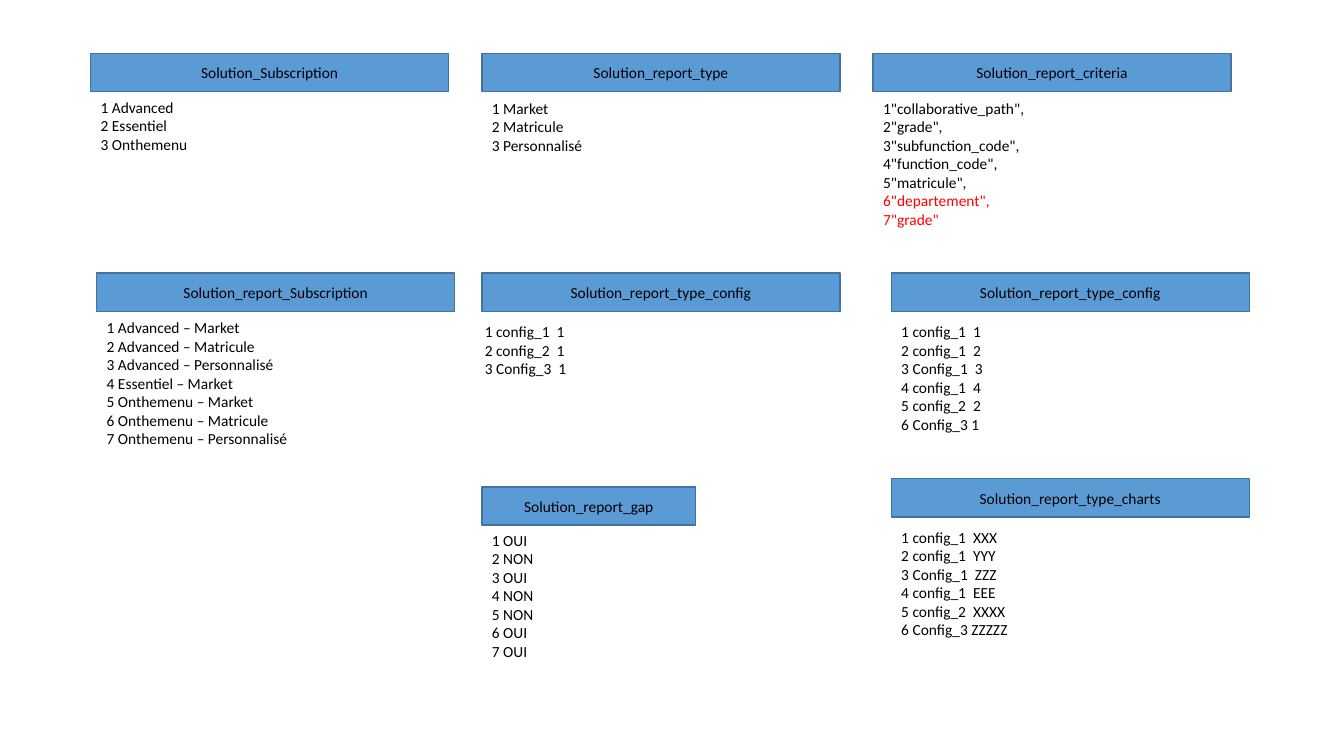
from dataclasses import dataclass

from pptx import Presentation
from pptx.dml.color import RGBColor
from pptx.enum.shapes import MSO_SHAPE
from pptx.enum.text import MSO_ANCHOR, MSO_AUTO_SIZE, PP_ALIGN
from pptx.util import Pt

RECTANGLE = MSO_SHAPE.RECTANGLE
MIDDLE = MSO_ANCHOR.MIDDLE
CENTER = PP_ALIGN.CENTER
FIT_SHAPE = MSO_AUTO_SIZE.SHAPE_TO_FIT_TEXT

PX = 9144  # 100 px to the inch
HEADER_HEIGHT = 38


@dataclass(frozen=True)
class Theme:
    font: str = "Calibri"
    size: Pt = Pt(11)
    border_width: Pt = Pt(1)
    fill: RGBColor = RGBColor(0x5B, 0x9B, 0xD5)
    border: RGBColor = RGBColor(0x43, 0x73, 0x9E)
    text: RGBColor = RGBColor(0, 0, 0)
    highlight: RGBColor = RGBColor(0xFF, 0, 0)


@dataclass(frozen=True)
class Entity:
    """A header with its list of rows; list_gap runs from header top to list top."""
    name: str
    left: int
    top: int
    rows: tuple[str, ...]
    list_gap: int
    list_height: int = 140
    list_shift: int = 0
    width: int = 355
    highlighted: int = 0  # number of last rows to show in the highlight colour


THEME = Theme()

ENTITIES = (
    Entity("Solution_Subscription", 90, 53,
           ("1 Advanced", "2 Essentiel", "3 Onthemenu"), 39, 96),
    Entity("Solution_report_type", 478, 53,
           ("1 Market", "2 Matricule", "3 Personnalisé"), 40, 66),
    Entity("Solution_report_criteria", 866, 53,
           ('1"collaborative_path",', '2"grade",', '3"subfunction_code",',
            '4"function_code",', '5"matricule",', '6"departement",', '7"grade"'),
           40, highlighted=2),
    Entity("Solution_report_Subscription", 96, 271,
           ("1 Advanced – Market", "2 Advanced – Matricule",
            "3 Advanced – Personnalisé", "4 Essentiel – Market",
            "5 Onthemenu – Market", "6 Onthemenu – Matricule",
            "7 Onthemenu – Personnalisé"), 40),
    Entity("Solution_report_type_config", 478, 271,
           ("1 config_1  1", "2 config_2  1", "3 Config_3  1"), 44, 66, list_shift=-7),
    Entity("Solution_report_type_config", 884, 271,
           ("1 config_1  1", "2 config_1  2", "3 Config_1  3",
            "4 config_1  4", "5 config_2  2", "6 Config_3 1"), 44),
    Entity("Solution_report_gap", 478, 483,
           ("1 OUI", "2 NON", "3 OUI", "4 NON", "5 NON", "6 OUI", "7 OUI"),
           39, width=212),
    Entity("Solution_report_type_charts", 884, 475,
           ("1 config_1  XXX", "2 config_1  YYY", "3 Config_1  ZZZ",
            "4 config_1  EEE", "5 config_2  XXXX", "6 Config_3 ZZZZZ"), 44),
)


def write(p, text: str, color: RGBColor) -> None:
    p.text = text
    for r in p.runs:
        r.font.name = THEME.font
        r.font.size = THEME.size
        r.font.color.rgb = color


def add_header(s, entity: Entity) -> None:
    sp = s.shapes.add_shape(RECTANGLE, entity.left * PX, entity.top * PX,
                            entity.width * PX, HEADER_HEIGHT * PX)
    sp.shadow.inherit = False
    sp.fill.solid()
    sp.fill.fore_color.rgb = THEME.fill
    sp.line.color.rgb = THEME.border
    sp.line.width = THEME.border_width
    tf = sp.text_frame
    tf.vertical_anchor = MIDDLE
    p = tf.paragraphs[0]
    p.alignment = CENTER
    write(p, entity.name, THEME.text)


def add_rows(s, entity: Entity) -> None:
    sp = s.shapes.add_textbox((entity.left + entity.list_shift) * PX,
                              (entity.top + entity.list_gap) * PX,
                              entity.width * PX, entity.list_height * PX)
    tf = sp.text_frame
    tf.word_wrap = True
    tf.auto_size = FIT_SHAPE
    first_highlighted = len(entity.rows) - entity.highlighted
    for i, row in enumerate(entity.rows):
        p = tf.add_paragraph() if i else tf.paragraphs[0]
        write(p, row, THEME.highlight if i >= first_highlighted else THEME.text)


def main() -> None:
    prs = Presentation()
    prs.slide_width = 1333 * PX
    prs.slide_height = 750 * PX
    s = prs.slides.add_slide(prs.slide_layouts[6])
    for entity in ENTITIES:
        add_header(s, entity)
        add_rows(s, entity)
    prs.save("out.pptx")


if __name__ == "__main__":
    main()
